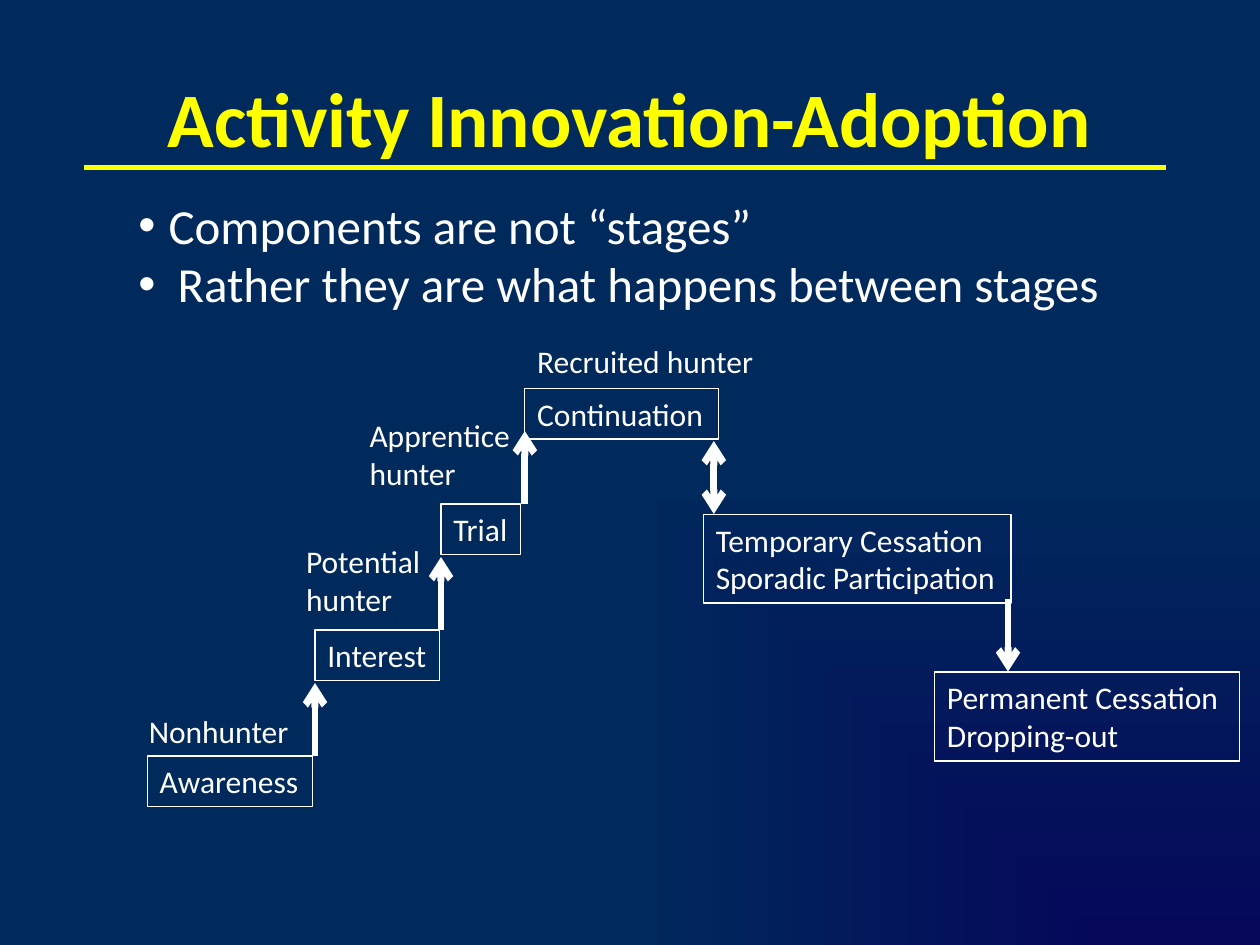
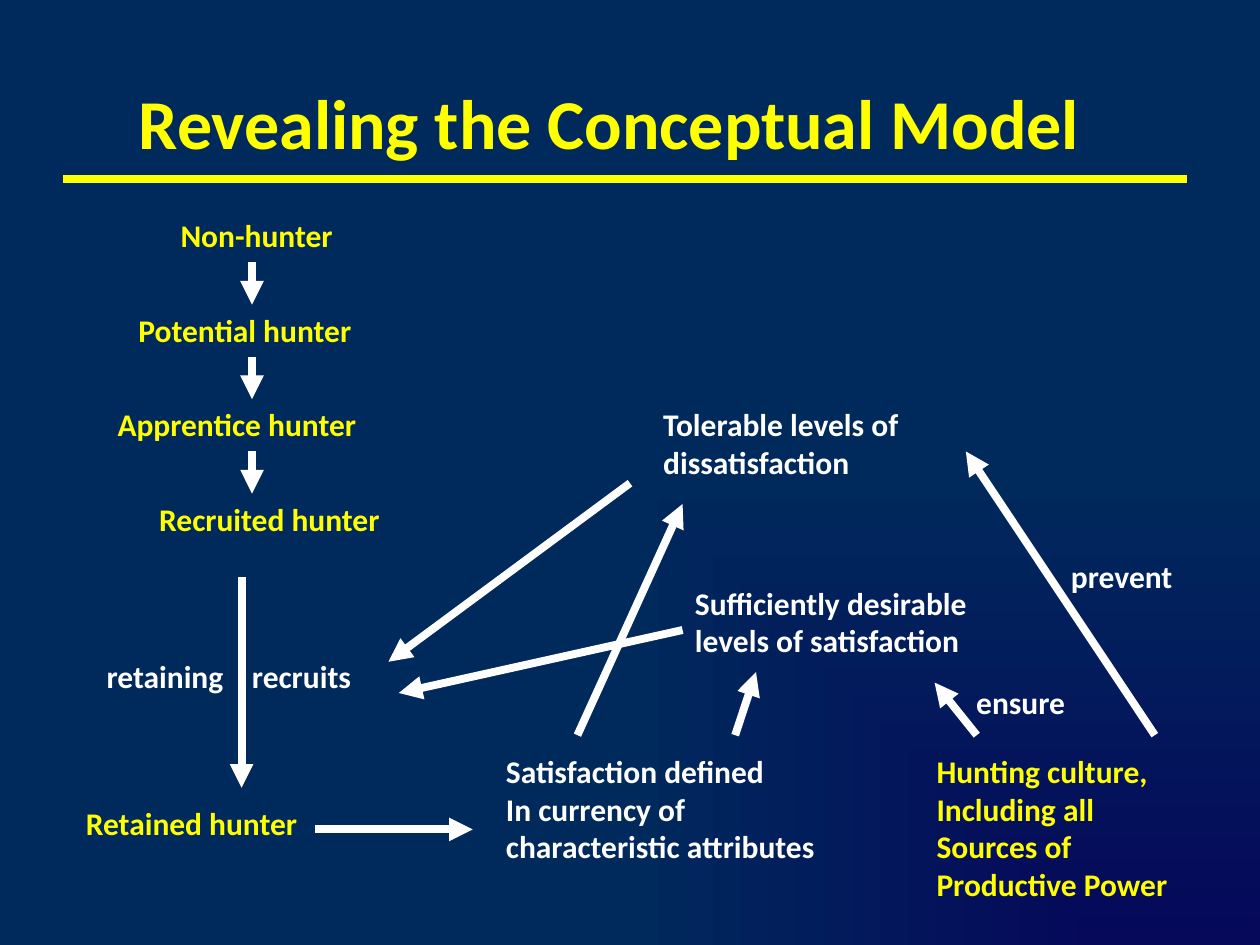
from lxml import etree
from pptx import Presentation
from pptx.dml.color import RGBColor
from pptx.enum.shapes import MSO_CONNECTOR, MSO_SHAPE
from pptx.enum.text import MSO_ANCHOR, MSO_AUTO_SIZE, PP_ALIGN
from pptx.oxml.ns import qn
from pptx.util import Cm, Pt

YELLOW = RGBColor(0xFF, 0xFF, 0x00)
WHITE = RGBColor(0xFF, 0xFF, 0xFF)
NAVY = RGBColor(0x00, 0x29, 0x5C)
INDIGO = RGBColor(0x06, 0x08, 0x5A)
FONT = "Calibri"
LEFT, CENTER = PP_ALIGN.LEFT, PP_ALIGN.CENTER
TOP, MIDDLE = MSO_ANCHOR.TOP, MSO_ANCHOR.MIDDLE
GROW = MSO_AUTO_SIZE.SHAPE_TO_FIT_TEXT
RECT = MSO_SHAPE.RECTANGLE
STRAIGHT = MSO_CONNECTOR.STRAIGHT


def put_text(s, text, x, y, w, size=18, color=WHITE, bold=False, wrap=False,
             boxed=False, title=False, indents=()):
    lines = text.split("\n")
    h = 3.18 if title else 0.25 + 0.77 * len(lines) * size / 18
    place = Cm(x), Cm(y), Cm(w), Cm(h)
    if title:
        sp = s.shapes.title
        sp.left, sp.top, sp.width, sp.height = place
    elif boxed:
        sp = s.shapes.add_shape(RECT, *place)
        sp.shadow.inherit = False
        sp.fill.background()
        sp.line.color.rgb = WHITE
        sp.line.width = Pt(0.75)
    else:
        sp = s.shapes.add_textbox(*place)
    tf = sp.text_frame
    tf.text = text
    tf.word_wrap = wrap or title
    tf.vertical_anchor = MIDDLE if title else TOP
    if not title:
        tf.auto_size = GROW
    for p in tf.paragraphs:
        p.alignment = CENTER if title else LEFT
        for r in p.runs:
            r.font.name = FONT
            r.font.size = Pt(size)
            r.font.bold = bold
            r.font.color.rgb = color
    for p, indent in zip(tf.paragraphs, indents):
        pPr = p._p.get_or_add_pPr()
        pPr.set("marL", str(Cm(indent)))
        pPr.set("indent", str(-Cm(indent)))
        etree.SubElement(pPr, qn("a:buFont")).set("typeface", "Arial")
        etree.SubElement(pPr, qn("a:buChar")).set("char", "•")


def put_line(s, x1, y1, x2, y2, width=4.5, color=WHITE, head=None, tail=None):
    cn = s.shapes.add_connector(STRAIGHT, Cm(x1), Cm(y1), Cm(x2), Cm(y2))
    cn.line.color.rgb = color
    cn.line.width = Pt(width)
    ln = cn.line._get_or_add_ln()
    for tag, kind in (("a:headEnd", head), ("a:tailEnd", tail)):
        if kind:
            etree.SubElement(ln, qn(tag)).set("type", kind)
    etree.SubElement(cn._element.spPr, qn("a:effectLst"))


prs = Presentation()
prs.slide_width, prs.slide_height = Cm(25.4), Cm(19.05)
title_only = prs.slide_layouts[5]

fill = prs.slide_master.background.fill
fill.gradient()
for stop, color in zip(fill.gradient_stops, (INDIGO, NAVY)):
    stop.color.rgb = color
grad = prs.slide_master.element.cSld.find(".//" + qn("a:gradFill"))
grad.remove(grad.find(qn("a:lin")))
corner = etree.SubElement(grad, qn("a:path"))
corner.set("path", "rect")
focus = etree.SubElement(corner, qn("a:fillToRect"))
focus.set("l", "100000")
focus.set("t", "100000")

s = prs.slides.add_slide(title_only)
put_text(s, "Activity Innovation-Adoption", 1.27, 0.76, 22.86, size=44,
         color=YELLOW, bold=True, title=True)
put_line(s, 1.7, 3.38, 23.5, 3.38, width=3, color=YELLOW)
put_text(s, "Components are not “stages”\nRather they are what happens between stages",
         2.54, 3.81, 20.6, size=28, wrap=True, indents=(0.61, 0.79))

components = [
    ("Awareness", 2.97, 15.24, 3.33),
    ("Interest", 6.35, 12.7, 2.51),
    ("Trial", 8.89, 10.16, 1.6),
    ("Continuation", 10.58, 7.83, 3.91),
    ("Temporary Cessation\nSporadic Participation", 14.18, 10.37, 6.2),
]
for text, x, y, w in components:
    put_text(s, text, x, y, w, boxed=True)
put_text(s, "Permanent Cessation\nDropping-out", 18.84, 13.55, 6.15, boxed=True, wrap=True)

RISE = 1.47
for x, y in [(6.35, 15.24), (8.89, 12.7), (10.58, 10.16)]:
    put_line(s, x, y, x, y - RISE, width=4, tail="arrow")
put_line(s, 14.39, 8.89, 14.39, 8.89 + RISE, width=4, head="arrow", tail="arrow")
put_line(s, 20.32, 12.07, 20.32, 12.07 + RISE, width=4, tail="arrow")

stages = [
    ("Nonhunter", 2.75, 14.22, 3.39, True),
    ("Potential\nhunter", 5.92, 10.8, 2.84, False),
    ("Apprentice\nhunter", 7.2, 8.26, 3.39, False),
    ("Recruited hunter", 10.58, 6.77, 4.92, False),
]
for text, x, y, w, wrap in stages:
    put_text(s, text, x, y, w, wrap=wrap)

s = prs.slides.add_slide(title_only)
put_text(s, "Revealing the Conceptual Model", 0.85, 0.85, 22.86, size=40,
         color=YELLOW, bold=True, title=True)
put_line(s, 1.27, 3.6, 23.92, 3.6, color=YELLOW)

STEP = 1.905
put_text(s, "Non-hunter", 3.39, 4.23, 6.15, color=YELLOW, bold=True, wrap=True)
actors = [
    ("Potential hunter", 2.54, 6.14, 4.85),
    ("Apprentice hunter", 2.12, 8.04, 5.51),
    ("Recruited hunter", 2.96, 9.95, 4.98),
    ("Retained hunter", 1.48, 16.09, 4.8),
    ("Hunting culture,\nIncluding all\nSources of\nProductive Power", 18.63, 15.03, 5.21),
]
for text, x, y, w in actors:
    put_text(s, text, x, y, w, color=YELLOW, bold=True)

conditions = [
    ("Tolerable levels of\ndissatisfaction", 13.12, 8.04, 5.28),
    ("Sufficiently desirable\nlevels of satisfaction", 13.76, 11.64, 6.35),
    ("Satisfaction defined\nIn currency of\ncharacteristic attributes", 9.95, 15.03, 6.81),
    ("retaining", 1.9, 13.12, 2.86),
    ("recruits", 4.83, 13.12, 2.5),
    ("ensure", 19.43, 13.64, 2.31),
    ("prevent", 21.34, 11.1, 2.57),
]
for text, x, y, w in conditions:
    put_text(s, text, x, y, w, bold=True)

for i in range(3):
    y = 5.29 + i * STEP
    put_line(s, 5.08, y, 5.08, y + 0.85, tail="triangle")
influences = [
    (4.87, 11.64, 4.87, 15.88),
    (6.35, 16.72, 9.53, 16.72),
    (11.64, 14.82, 13.76, 10.16),
    (14.82, 14.82, 15.24, 13.55),
    (13.76, 12.7, 8.04, 13.97),
    (12.7, 9.74, 7.83, 13.34),
    (19.69, 14.82, 18.84, 13.76),
    (23.28, 14.82, 19.47, 9.1),
]
for ends in influences:
    put_line(s, *ends, tail="triangle")

prs.save("out.pptx")
